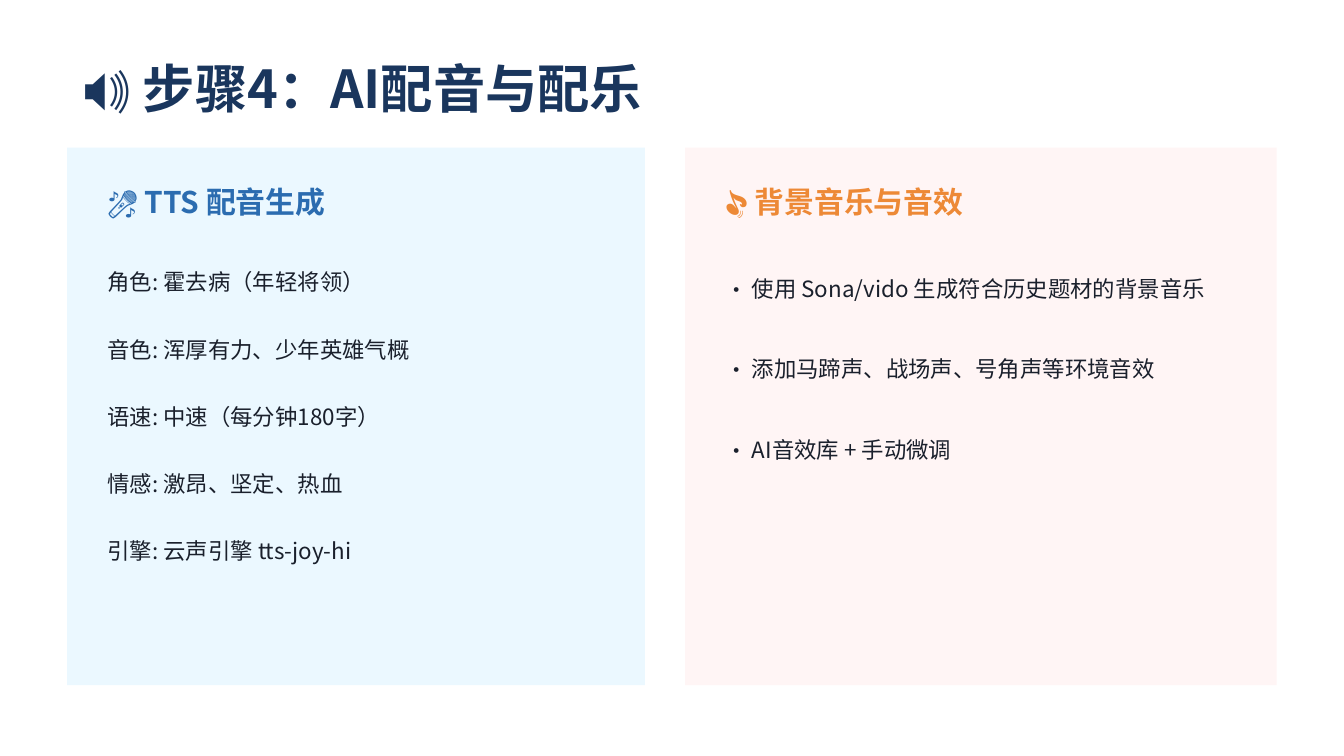
from lxml.etree import SubElement
from pptx import Presentation
from pptx.dml.color import RGBColor
from pptx.enum.shapes import MSO_SHAPE
from pptx.enum.text import MSO_ANCHOR, PP_ALIGN
from pptx.oxml.ns import qn
from pptx.util import Cm, Pt

FONT = "Noto Sans CJK SC"
INK = "1A202C"
NAVY = "1A365D"


def rgb(value):
    """Return the colour for a hex string."""
    return RGBColor.from_string(value)


def write(sp, text, size, color, bold=False, bullet=False):
    """Write one line of middle-anchored, left-aligned text in a shape."""
    tf = sp.text_frame
    tf.word_wrap = True
    tf.vertical_anchor = MSO_ANCHOR.MIDDLE
    p = tf.paragraphs[0]
    p.alignment = PP_ALIGN.LEFT
    if bullet:
        pPr = p._p.get_or_add_pPr()
        pPr.set("marL", str(Cm(0.5)))
        pPr.set("indent", str(-Cm(0.5)))
        SubElement(pPr, qn("a:buFont"), typeface=FONT)
        SubElement(pPr, qn("a:buChar"), char="•")
    r = p.add_run()
    r.text = text
    r.font.name = FONT
    r.font.size = Pt(size)
    r.font.bold = bold
    r.font.color.rgb = rgb(color)
    SubElement(r._r.get_or_add_rPr(), qn("a:ea"), typeface=FONT)


def add_title(s, box, text):
    """Move and format the title placeholder."""
    sp = s.shapes.title
    sp.left, sp.top, sp.width, sp.height = map(Cm, box)
    write(sp, text, 28, NAVY, bold=True)


def add_panel(s, box, fill, heading, accent, lines, row_h, bullet=False):
    """Draw a filled panel with a heading and evenly spaced lines."""
    x, y, w, h = box
    sp = s.shapes.add_shape(MSO_SHAPE.RECTANGLE, *map(Cm, box))
    sp.shadow.inherit = False
    sp.fill.solid()
    sp.fill.fore_color.rgb = rgb(fill)
    sp.line.fill.background()

    left, text_w, gap = Cm(x + 0.51), Cm(10.16), 0.25
    tb = s.shapes.add_textbox(left, Cm(y + 0.51), text_w, Cm(1.02))
    write(tb, heading, 16, accent, bold=True)
    for i, line in enumerate(lines):
        top = Cm(y + 2.03 + i * (row_h + gap))
        tb = s.shapes.add_textbox(left, top, text_w, Cm(row_h))
        write(tb, line, 12, INK, bullet=bullet)


def main():
    """Build the slide and save it."""
    prs = Presentation()
    prs.slide_width, prs.slide_height = Cm(25.4), Cm(14.29)
    s = prs.slides.add_slide(prs.slide_layouts[5])
    add_title(s, (1.27, 0.76, 22.86, 1.78), "🔊 步骤4：AI配音与配乐")
    add_panel(
        s, (1.27, 2.79, 10.92, 10.16), "EBF8FF", "🎤 TTS 配音生成", "2B6CB0",
        ["角色: 霍去病（年轻将领）",
         "音色: 浑厚有力、少年英雄气概",
         "语速: 中速（每分钟180字）",
         "情感: 激昂、坚定、热血",
         "引擎: 云声引擎 tts-joy-hi"],
        row_h=1.02)
    add_panel(
        s, (12.95, 2.79, 11.18, 10.16), "FFF5F5", "🎵 背景音乐与音效", "ED8936",
        ["使用 Sona/vido 生成符合历史题材的背景音乐",
         "添加马蹄声、战场声、号角声等环境音效",
         "AI音效库 + 手动微调"],
        row_h=1.27, bullet=True)
    prs.save("out.pptx")


if __name__ == "__main__":
    main()
